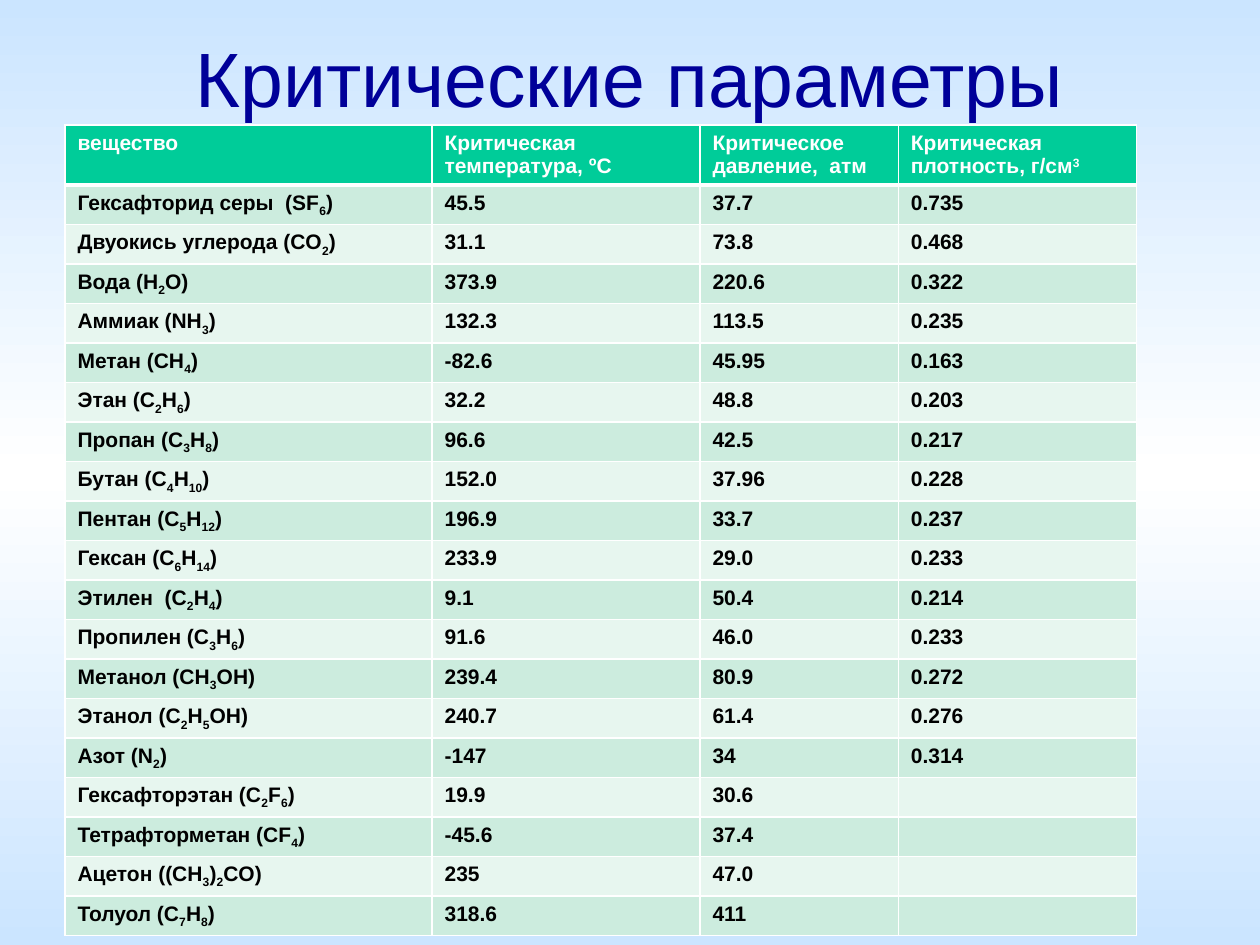
import copy
import itertools

import lxml.etree
import pptx
import pptx.dml.color
import pptx.enum.text
import pptx.oxml.ns
import pptx.util

Cm = pptx.util.Cm
Pt = pptx.util.Pt
qn = pptx.oxml.ns.qn

COLORS = {
    "sky": "CBE5FF",
    "white": "FFFFFF",
    "title": "000099",
    "header": "00CC99",
    "odd": "CCECDE",
    "even": "E7F6EF",
    "text": "000000",
}
SUBSCRIPT, SUPERSCRIPT = -25000, 30000
COLUMN_WIDTHS = [7.4, 5.4, 4, 4.8]
HEADER_HEIGHT, TABLE_HEIGHT = 1.21, 16.33

HEADINGS = [
    "вещество",
    "Критическая температура, ºС",
    "Критическое давление,  атм",
    "Критическая плотность, г/см3",
]
SUBSTANCES = [
    ("Гексафторид серы  (SF6)", "45.5", "37.7", "0.735"),
    ("Двуокись углерода (CO2)", "31.1", "73.8", "0.468"),
    ("Вода (H2O)", "373.9", "220.6", "0.322"),
    ("Аммиак (NH3)", "132.3", "113.5", "0.235"),
    ("Метан (СН4)", "-82.6", "45.95", "0.163"),
    ("Этан (C2H6)", "32.2", "48.8", "0.203"),
    ("Пропан (C3H8)", "96.6", "42.5", "0.217"),
    ("Бутан (C4H10)", "152.0", "37.96", "0.228"),
    ("Пентан (C5H12)", "196.9", "33.7", "0.237"),
    ("Гексан (C6H14)", "233.9", "29.0", "0.233"),
    ("Этилен  (C2H4)", "9.1", "50.4", "0.214"),
    ("Пропилен (C3H6)", "91.6", "46.0", "0.233"),
    ("Метанол (CH3OH)", "239.4", "80.9", "0.272"),
    ("Этанол (C2H5OH)", "240.7", "61.4", "0.276"),
    ("Азот (N2)", "-147", "34", "0.314"),
    ("Гексафторэтан (C2F6)", "19.9", "30.6", ""),
    ("Тетрафторметан (CF4)", "-45.6", "37.4", ""),
    ("Ацетон ((CH3)2CO)", "235", "47.0", ""),
    ("Толуол (C7H8)", "318.6", "411", ""),
]


def rgb(name):
    return pptx.dml.color.RGBColor.from_string(COLORS[name])


def write(frame, text, size=12, color="text", bold=False, align=None, digits=None, font="Arial"):
    paragraph = frame.paragraphs[0]
    paragraph.alignment = align
    parts = [(False, text)] if text else []
    if digits:
        parts = [(is_digit, "".join(part)) for is_digit, part in itertools.groupby(text, str.isdigit)]
    for is_digit, part in parts:
        run = paragraph.add_run()
        run.text = part
        run.font.name = font
        run.font.size = Pt(size)
        run.font.bold = bold
        run.font.color.rgb = rgb(color)
        if digits and is_digit:
            run.font._element.set("baseline", str(digits))
    if not parts:
        lxml.etree.SubElement(paragraph._p, qn("a:endParaRPr"), sz=str(size * 100))


class SlideBuilder:
    def __init__(self, deck):
        self.slide = deck.slides.add_slide(deck.slide_layouts[5])

    def background(self, stops):
        fill = self.slide.background.fill
        fill.gradient()
        fill.gradient_angle = 90
        stop_list = self.slide._element.find(".//" + qn("a:gsLst"))
        while len(stop_list) < len(stops):
            stop_list.append(copy.deepcopy(stop_list[0]))
        for stop, (position, color) in zip(fill.gradient_stops, stops):
            stop.position = position
            stop.color.rgb = rgb(color)

    def title(self, text, left, top, width, height):
        heading = self.slide.shapes.title
        heading.left, heading.top = Cm(left), Cm(top)
        heading.width, heading.height = Cm(width), Cm(height)
        heading.text_frame.vertical_anchor = pptx.enum.text.MSO_ANCHOR.MIDDLE
        write(heading.text_frame, text, size=44, color="title", align=pptx.enum.text.PP_ALIGN.CENTER)

    def borders(self, cell, top=1, bottom=1):
        properties = cell._tc.get_or_add_tcPr()
        widths = {"a:lnL": 1, "a:lnR": 1, "a:lnT": top, "a:lnB": bottom}
        for index, (tag, width) in enumerate(widths.items()):
            line = lxml.etree.Element(qn(tag), w=str(Pt(width)))
            solid = lxml.etree.SubElement(line, qn("a:solidFill"))
            lxml.etree.SubElement(solid, qn("a:srgbClr"), val=COLORS["white"])
            properties.insert(index, line)

    def cell(self, cell, text, fill, top=1, bottom=1, **style):
        self.borders(cell, top, bottom)
        cell.fill.solid()
        cell.fill.fore_color.rgb = rgb(fill)
        write(cell.text_frame, text, bold=True, **style)

    def table(self, headings, records, left, top):
        table = self.slide.shapes.add_table(
            len(records) + 1, len(headings),
            Cm(left), Cm(top), Cm(sum(COLUMN_WIDTHS)), Cm(TABLE_HEIGHT),
        ).table
        for column, width in zip(table.columns, COLUMN_WIDTHS):
            column.width = Cm(width)
        for row in table.rows:
            row.height = Cm((TABLE_HEIGHT - HEADER_HEIGHT) / len(records))
        table.rows[0].height = Cm(HEADER_HEIGHT)

        for column, heading in enumerate(headings):
            self.cell(table.cell(0, column), heading, "header", bottom=3,
                      color="white", digits=SUPERSCRIPT)
        for row, record in enumerate(records, 1):
            for column, value in enumerate(record):
                self.cell(table.cell(row, column), value, "odd" if row % 2 else "even",
                          top=3 if row == 1 else 1,
                          digits=SUBSCRIPT if column == 0 else None)


def main():
    deck = pptx.Presentation()
    deck.slide_width, deck.slide_height = Cm(25.4), Cm(19.05)
    builder = SlideBuilder(deck)
    builder.background([(0, "sky"), (0.5, "white"), (1, "sky")])
    builder.title("Критические параметры", 1.9, -0.05, 21.6, 3.18)
    builder.table(HEADINGS, SUBSTANCES, 1.31, 2.52)
    deck.save("out.pptx")


if __name__ == "__main__":
    main()
